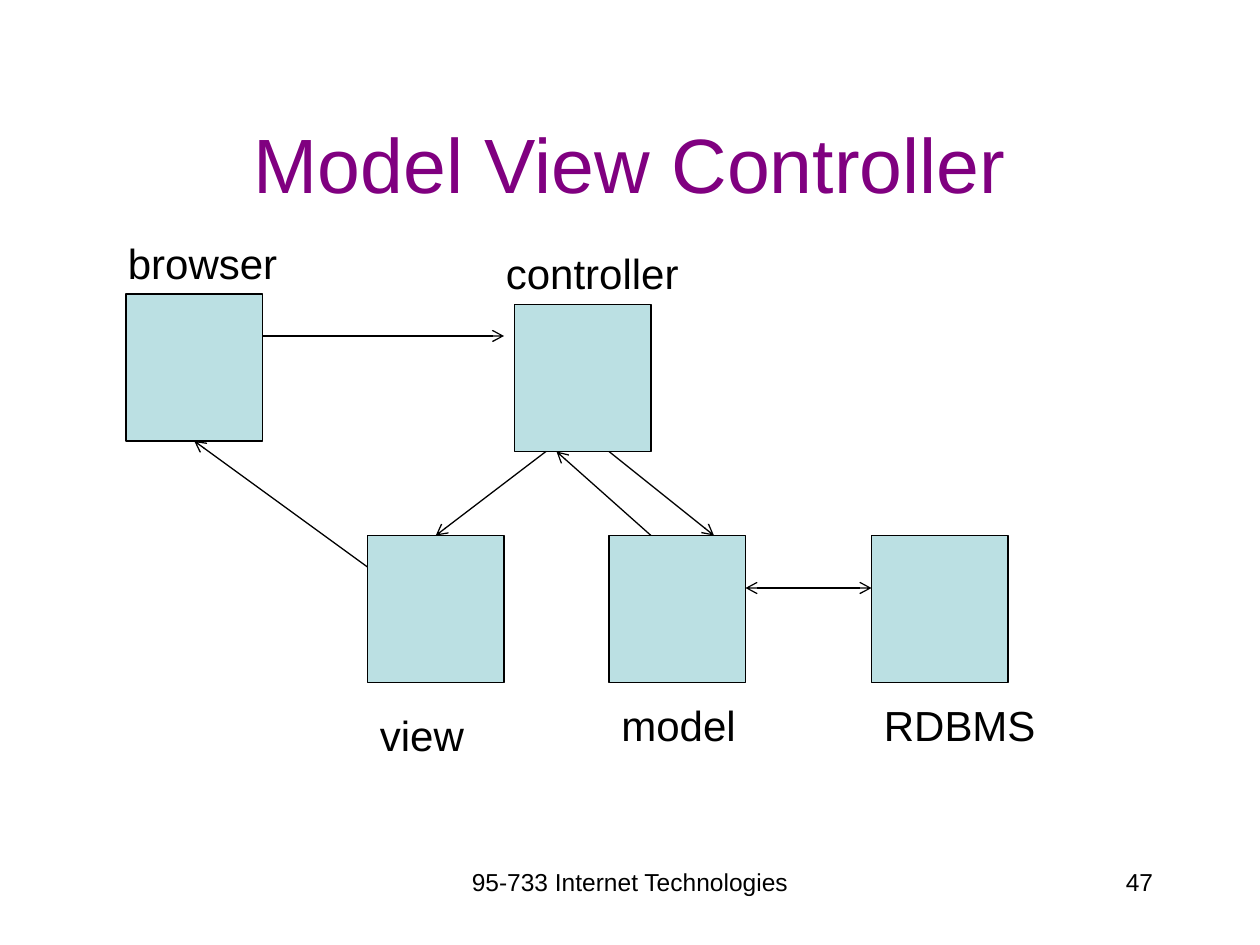
from lxml import etree
from pptx import Presentation
from pptx.dml.color import RGBColor
from pptx.enum.shapes import MSO_CONNECTOR, MSO_SHAPE
from pptx.enum.text import MSO_ANCHOR, PP_ALIGN
from pptx.oxml.ns import qn
from pptx.util import Inches, Pt

LEFT, CENTER, RIGHT = PP_ALIGN.LEFT, PP_ALIGN.CENTER, PP_ALIGN.RIGHT
TOP, MIDDLE = MSO_ANCHOR.TOP, MSO_ANCHOR.MIDDLE
STRAIGHT, RECTANGLE = MSO_CONNECTOR.STRAIGHT, MSO_SHAPE.RECTANGLE
TOP_SIDE, BOTTOM_SIDE = 0, 2

COLORS = {"title": "800080", "text": "000000", "line": "000000", "box": "BBE0E3"}
FONT = "Arial"
LINE_WIDTH = 0.75

# The slide is a grid of 120 columns and 90 rows; places below are in cells
WIDTH, HEIGHT = 10, 7.5
CELL = WIDTH / 120
BOX_W, BOX_H = 13, 14
LABEL_H = 6.1

TITLE = ("Model View Controller", (9, 8, 102, 15))
FOOTERS = [
    ("95-733 Internet Technologies", (41, 82, 38, 6), CENTER),
    ("47", (86, 82, 25, 6), RIGHT),
]
# name: box column and row, label column, row and width, label wraps
COMPONENTS = {
    "browser": ((12, 28), (11, 22, 16.8), False),
    "controller": ((49, 29), (47, 23, 25), True),
    "view": ((35, 51), (35, 67, 10.8), False),
    "model": ((58, 51), (58, 66, 13.4), False),
    "RDBMS": ((83, 51), (83, 66, 17), False),
}
# start, end, arrowhead at start, (component, side) joined at the end
ARROWS = [
    ((25, 32), (48, 32), False, None),
    ((58, 43), (68, 51), False, None),
    ((71, 56), (83, 56), True, None),
    ((62, 51), (53, 43), False, None),
    ((52, 43), (41.5, 51), False, ("view", TOP_SIDE)),
    ((35, 54), (18.5, 42), False, ("browser", BOTTOM_SIDE)),
]


def cells(*counts):
    return [Inches(count * CELL) for count in counts]


def color(name):
    return RGBColor.from_string(COLORS[name])


def write(shape, text, size, ink="text", align=LEFT, anchor=TOP, wrap=True):
    frame = shape.text_frame
    frame.word_wrap = wrap
    frame.vertical_anchor = anchor
    paragraph = frame.paragraphs[0]
    paragraph.alignment = align
    run = paragraph.add_run()
    run.text = text
    run.font.name = FONT
    run.font.size = Pt(size)
    run.font.color.rgb = color(ink)


def draw_outline(shape):
    shape.line.color.rgb = color("line")
    shape.line.width = Pt(LINE_WIDTH)


def add_arrow(slide, start, end, both_ways, joined_box=None, side=None):
    arrow = slide.shapes.add_connector(STRAIGHT, *cells(*start, *end))
    if joined_box is not None:
        arrow.end_connect(joined_box, side)
    draw_outline(arrow)
    line = arrow.line._get_or_add_ln()
    for tag in ["a:headEnd", "a:tailEnd"] if both_ways else ["a:tailEnd"]:
        etree.SubElement(line, qn(tag), type="arrow")
    etree.SubElement(arrow._element.spPr, qn("a:effectLst"))


def main():
    deck = Presentation()
    deck.slide_width, deck.slide_height = Inches(WIDTH), Inches(HEIGHT)
    slide = deck.slides.add_slide(deck.slide_layouts[5])
    shapes = slide.shapes

    # Title
    text, place = TITLE
    title = shapes.title
    title.left, title.top, title.width, title.height = cells(*place)
    write(title, text, 44, ink="title", align=CENTER, anchor=MIDDLE)

    # Footer and page number
    for text, place, align in FOOTERS:
        write(shapes.add_textbox(*cells(*place)), text, 14, align=align)

    # Components with their labels
    boxes = {}
    for name, (corner, label_place, wrap) in COMPONENTS.items():
        box = shapes.add_shape(RECTANGLE, *cells(*corner, BOX_W, BOX_H))
        box.shadow.inherit = False
        box.fill.solid()
        box.fill.fore_color.rgb = color("box")
        draw_outline(box)
        boxes[name] = box
        label = shapes.add_textbox(*cells(*label_place, LABEL_H))
        write(label, name, 24, wrap=wrap)

    # Arrows
    for start, end, both_ways, joint in ARROWS:
        name, side = joint or (None, None)
        add_arrow(slide, start, end, both_ways, boxes.get(name), side)

    deck.save("out.pptx")


if __name__ == "__main__":
    main()
